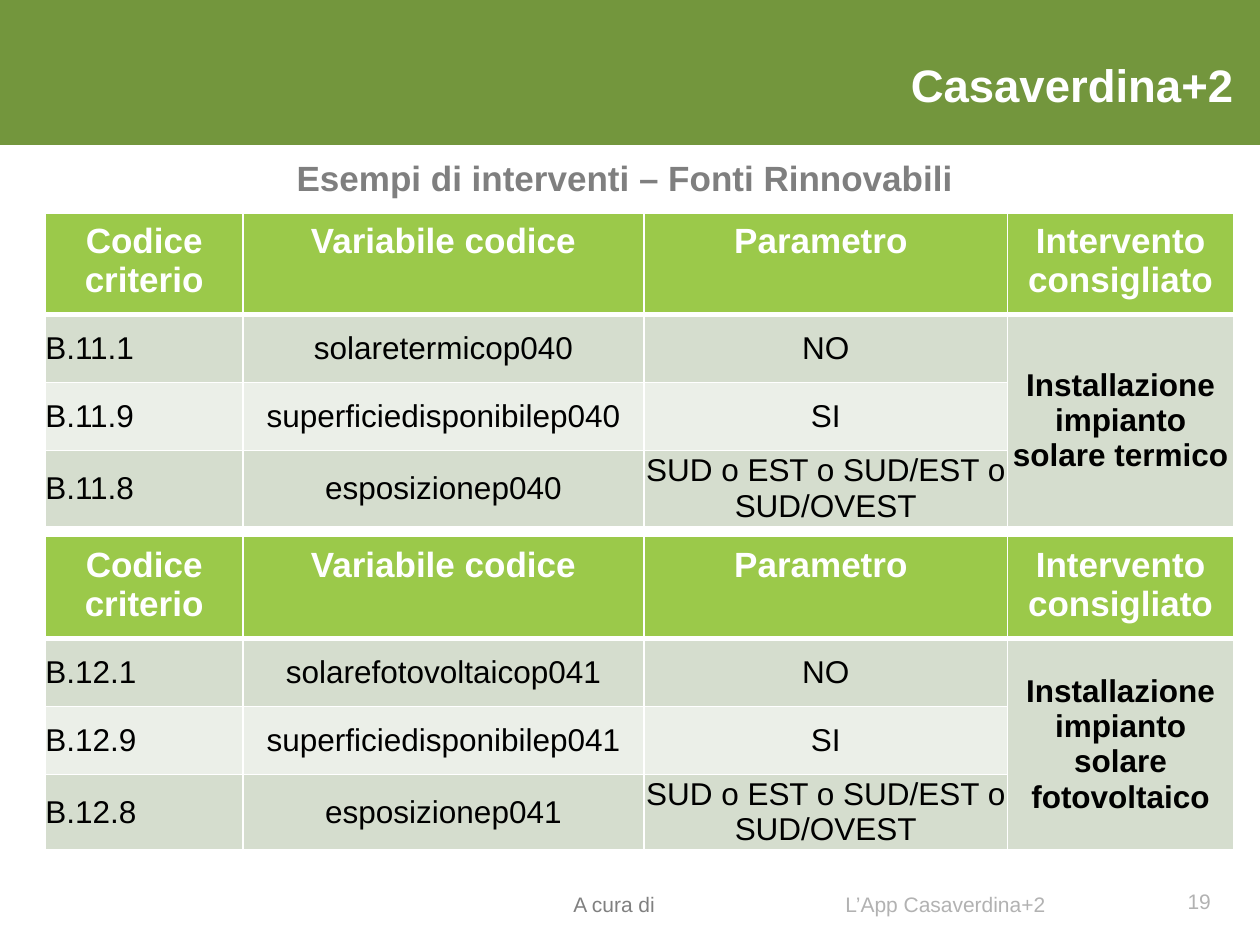
from dataclasses import dataclass

from lxml import etree
from pptx import Presentation
from pptx.dml.color import RGBColor
from pptx.enum.shapes import MSO_SHAPE
from pptx.enum.text import MSO_ANCHOR, MSO_AUTO_SIZE, PP_ALIGN
from pptx.oxml.ns import qn
from pptx.slide import Slide
from pptx.table import _Cell
from pptx.util import Pt

LEFT, CENTER, RIGHT = PP_ALIGN.LEFT, PP_ALIGN.CENTER, PP_ALIGN.RIGHT
TOP, MIDDLE = MSO_ANCHOR.TOP, MSO_ANCHOR.MIDDLE
GROW, FIXED = MSO_AUTO_SIZE.SHAPE_TO_FIT_TEXT, MSO_AUTO_SIZE.NONE
RECTANGLE = MSO_SHAPE.RECTANGLE


@dataclass(frozen=True)
class Theme:
    font: str = "Arial"
    banner: str = "73963D"
    header: str = "9BC94A"
    band_dark: str = "D5DDCE"
    band_light: str = "EBEFE8"
    white: str = "FFFFFF"
    black: str = "000000"
    subtitle: str = "7F7F7F"
    credit: str = "808080"
    footer: str = "B2B2B2"
    title_size: float = 26
    heading_size: float = 20
    body_size: float = 18
    footer_size: float = 12
    thin_line: float = 1
    thick_line: float = 3


THEME = Theme()


@dataclass(frozen=True)
class Label:
    text: str
    box: tuple[float, float, float, float]
    size: float
    color: str
    bold: bool = False
    align: PP_ALIGN = LEFT
    anchor: MSO_ANCHOR = MIDDLE
    insets: tuple[float, float, float, float] = (7.2, 3.6, 7.2, 3.6)
    auto_size: MSO_AUTO_SIZE = FIXED


@dataclass(frozen=True)
class CriteriaTable:
    top: float
    criterion: str
    variable_suffix: str
    source_variable: str
    advice: str


FOOTER_INSETS = (0, 3.6, 7.2, 0)
LABELS = (
    Label("A cura di", (327.6, 500.4, 158.4, 28.8), THEME.footer_size,
          THEME.credit, insets=FOOTER_INSETS),
    Label("L’App Casaverdina+2", (483.1, 500.4, 175, 28.8), THEME.footer_size,
          THEME.footer, insets=FOOTER_INSETS),
    Label("Casaverdina+2", (64.1, 32.4, 648, 31.7), THEME.title_size, THEME.white,
          bold=True, align=RIGHT, insets=(7.2, 0, 7.2, 0), auto_size=GROW),
    Label("Esempi di interventi – Fonti Rinnovabili", (-2.9, 85.7, 720, 31.7),
          THEME.heading_size, THEME.subtitle, bold=True, align=CENTER,
          anchor=TOP, auto_size=GROW),
    Label("19", (658.1, 500.4, 41, 28.8), THEME.footer_size, THEME.footer, align=RIGHT),
)

HEADINGS = ("Codice criterio", "Variabile codice", "Parametro ", "Intervento consigliato")
COLUMN_WIDTHS = (113, 229, 208, 129)
TABLE_LEFT, TABLE_HEIGHT, ROW_HEIGHT = 25.9, 178.6, 38.9
TABLES = (
    CriteriaTable(121.7, "B.11", "p040", "solaretermico",
                  "Installazione impianto solare termico"),
    CriteriaTable(306.7, "B.12", "p041", "solarefotovoltaico",
                  "Installazione impianto solare fotovoltaico"),
)


def apply_format(target: object, values: dict[str, object]) -> None:
    for name, value in values.items():
        setattr(target, name, value)


def write_text(frame, text: str, size: float, color: str, bold: bool,
               align: PP_ALIGN) -> None:
    paragraph = frame.paragraphs[0]
    paragraph.alignment = align
    run = paragraph.add_run()
    run.text = text
    apply_format(run.font, {"name": THEME.font, "size": Pt(size), "bold": bold})
    run.font.color.rgb = RGBColor.from_string(color)


def inset_values(insets: tuple[float, float, float, float]) -> dict[str, object]:
    names = ("margin_left", "margin_top", "margin_right", "margin_bottom")
    return {name: Pt(inset) for name, inset in zip(names, insets)}


def add_label(slide: Slide, label: Label) -> None:
    shape = slide.shapes.add_textbox(*map(Pt, label.box))
    apply_format(shape.text_frame, {
        "word_wrap": True,
        "auto_size": label.auto_size,
        "vertical_anchor": label.anchor,
        **inset_values(label.insets),
    })
    write_text(shape.text_frame, label.text, label.size, label.color,
               label.bold, label.align)


def add_banner(slide: Slide) -> None:
    banner = slide.shapes.add_shape(RECTANGLE, Pt(0), Pt(0), Pt(720), Pt(82.8))
    banner.shadow.inherit = False
    banner.fill.solid()
    banner.fill.fore_color.rgb = RGBColor.from_string(THEME.banner)
    banner.line.fill.background()


def set_borders(cell: _Cell, row: int) -> None:
    properties = cell._tc.get_or_add_tcPr()
    widths = {
        "a:lnL": THEME.thin_line,
        "a:lnR": THEME.thin_line,
        "a:lnT": THEME.thick_line if row == 1 else THEME.thin_line,
        "a:lnB": THEME.thick_line if row == 0 else THEME.thin_line,
    }
    for tag, width in widths.items():
        line = etree.SubElement(properties, qn(tag), w=str(Pt(width)))
        fill = etree.SubElement(line, qn("a:solidFill"))
        etree.SubElement(fill, qn("a:srgbClr"), val=THEME.white)


def format_cell(cell: _Cell, row: int) -> None:
    is_header = row == 0
    apply_format(cell, {
        "vertical_anchor": TOP if is_header else MIDDLE,
        **inset_values((7.2, 5, 7.2, 5) if is_header else (0, 0, 0, 0)),
    })
    set_borders(cell, row)
    band = THEME.band_dark if row % 2 else THEME.band_light
    cell.fill.solid()
    cell.fill.fore_color.rgb = RGBColor.from_string(THEME.header if is_header else band)


def add_criteria_table(slide: Slide, content: CriteriaTable) -> None:
    criteria = (
        ("1", content.source_variable, "NO", content.advice),
        ("9", "superficiedisponibile", "SI", ""),
        ("8", "esposizione", "SUD o EST o SUD/EST o SUD/OVEST", ""),
    )
    rows = [HEADINGS] + [
        (f"{content.criterion}.{number}", variable + content.variable_suffix, value, advice)
        for number, variable, value, advice in criteria
    ]
    frame = slide.shapes.add_table(
        len(rows), len(HEADINGS), Pt(TABLE_LEFT), Pt(content.top),
        Pt(sum(COLUMN_WIDTHS)), Pt(TABLE_HEIGHT))
    table = frame.table
    for column, width in zip(table.columns, COLUMN_WIDTHS):
        column.width = Pt(width)
    for table_row in table.rows:
        table_row.height = Pt(ROW_HEIGHT)
    frame.height = Pt(TABLE_HEIGHT)
    table.cell(1, 3).merge(table.cell(3, 3))
    for row, texts in enumerate(rows):
        for column, text in enumerate(texts):
            cell = table.cell(row, column)
            format_cell(cell, row)
            if not text:
                continue
            is_header = row == 0
            write_text(
                cell.text_frame, text,
                THEME.heading_size if is_header else THEME.body_size,
                THEME.white if is_header else THEME.black,
                is_header or column == 3,
                LEFT if column == 0 and not is_header else CENTER)


def main() -> None:
    presentation = Presentation()
    apply_format(presentation, {"slide_width": Pt(720), "slide_height": Pt(540)})
    slide = presentation.slides.add_slide(presentation.slide_layouts[6])
    add_banner(slide)
    for label in LABELS:
        add_label(slide, label)
    for content in TABLES:
        add_criteria_table(slide, content)
    presentation.save("out.pptx")


if __name__ == "__main__":
    main()
